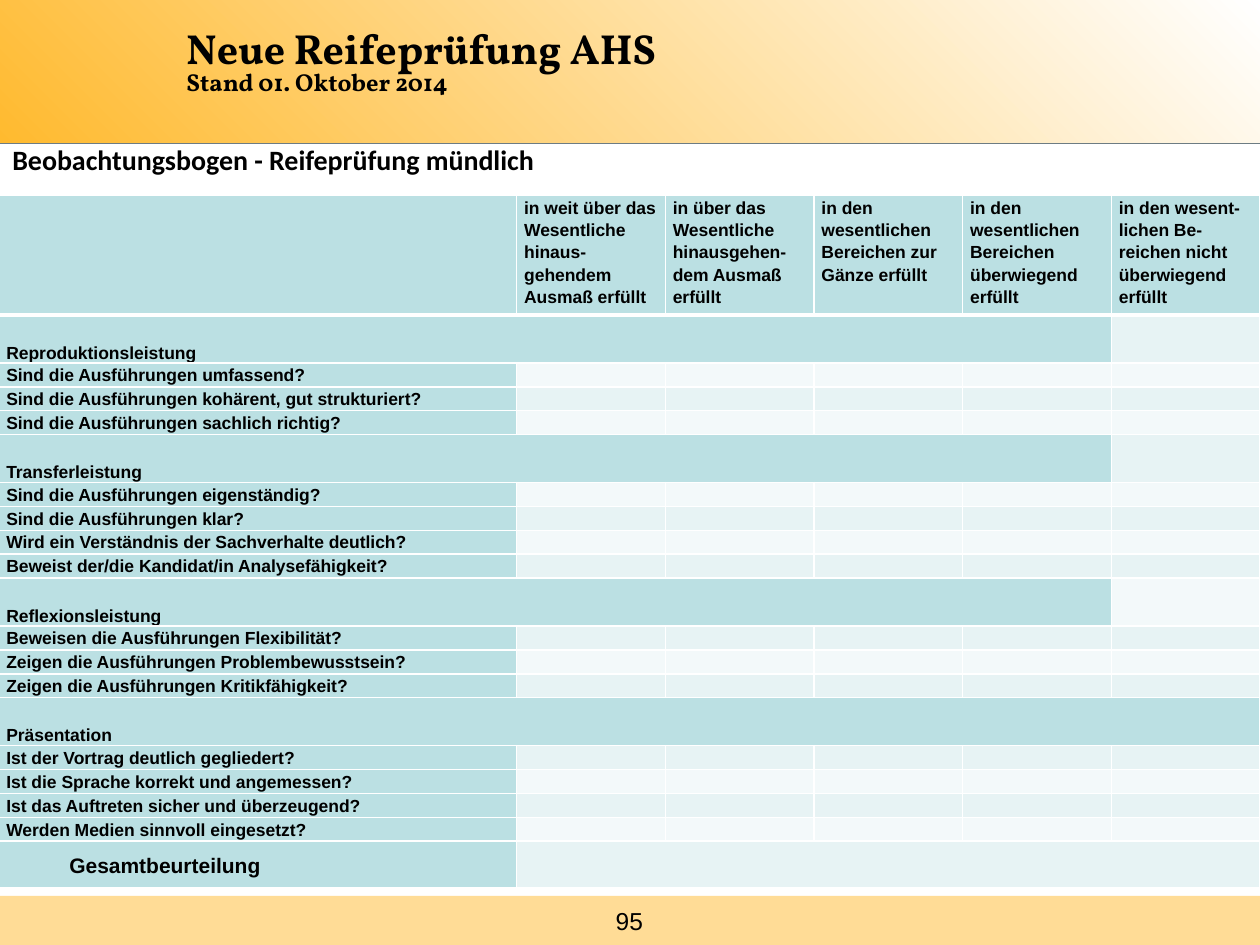
import pptx
import pptx.util
import pptx.dml.color
import pptx.enum.shapes
import pptx.enum.text
import pptx.oxml
import pptx.oxml.ns
from lxml import etree

Inches = pptx.util.Inches
Pt = pptx.util.Pt
Anchor = pptx.enum.text.MSO_ANCHOR
Align = pptx.enum.text.PP_ALIGN

RATINGS = [
    "in weit über das Wesentliche hinaus-gehendem Ausmaß erfüllt",
    "in über das Wesentliche hinausgehen-dem Ausmaß erfüllt",
    "in den wesentlichen Bereichen zur Gänze erfüllt",
    "in den wesentlichen Bereichen überwiegend erfüllt",
    "in den wesent-lichen Be-reichen nicht überwiegend erfüllt",
]
SECTIONS = [
    ("Reproduktionsleistung", 5, [
        "Sind die Ausführungen umfassend?",
        "Sind die Ausführungen kohärent, gut strukturiert?",
        "Sind die Ausführungen sachlich richtig?"]),
    ("Transferleistung", 5, [
        "Sind die Ausführungen eigenständig?",
        "Sind die Ausführungen klar?",
        "Wird ein Verständnis der Sachverhalte deutlich?",
        "Beweist der/die Kandidat/in Analysefähigkeit?"]),
    ("Reflexionsleistung", 5, [
        "Beweisen die Ausführungen Flexibilität?",
        "Zeigen die Ausführungen Problembewusstsein?",
        "Zeigen die Ausführungen Kritikfähigkeit?"]),
    ("Präsentation", 6, [
        "Ist der Vortrag deutlich gegliedert?",
        "Ist die Sprache korrekt und angemessen?",
        "Ist das Auftreten sicher und überzeugend?",
        "Werden Medien sinnvoll eingesetzt?"]),
]


def rgb(value):
    return pptx.dml.color.RGBColor.from_string(value)


def add_xml(parent, tag, **attributes):
    return etree.SubElement(parent, pptx.oxml.ns.qn(tag), attributes)


class Sheet:
    ink, amber, rule, white = "000000", "FFBA2F", "6D7C83", "FFFFFF"
    label, bands = "BBE0E3", ("F3F9FA", "E7F3F4")

    def __init__(self, slide):
        self.slide = slide

    def style(self, paragraph, font, size, bold=False):
        for run in paragraph.runs:
            run.font.name = font
            run.font.size = Pt(size)
            run.font.bold = bold
            run.font.color.rgb = rgb(self.ink)

    def band(self, top, height):
        band = self.slide.shapes.add_shape(
            pptx.enum.shapes.MSO_SHAPE.RECTANGLE, 0, Inches(top), Inches(10), Inches(height))
        band.shadow.inherit = False
        band.line.fill.background()
        band.fill.solid()
        band.fill.fore_color.rgb = rgb(self.amber)
        return band

    def radial_band(self, top, height):
        band = self.band(top, height)
        band.fill.gradient()
        gradient = band._element.spPr.find(pptx.oxml.ns.qn("a:gradFill"))
        for child in list(gradient):
            gradient.remove(child)
        stops = add_xml(gradient, "a:gsLst")
        for position, color in (("0", self.amber), ("100000", self.white)):
            add_xml(add_xml(stops, "a:gs", pos=position), "a:srgbClr", val=color)
        add_xml(add_xml(gradient, "a:path", path="circle"), "a:fillToRect", t="100000", r="100000")

    def clear_band(self, top, height, alpha):
        band = self.band(top, height)
        color = band._element.spPr.find(".//" + pptx.oxml.ns.qn("a:srgbClr"))
        add_xml(color, "a:alpha", val=str(alpha * 1000))

    def line(self, top):
        line = self.slide.shapes.add_connector(
            pptx.enum.shapes.MSO_CONNECTOR.STRAIGHT, 0, Inches(top), Inches(10), Inches(top))
        line.line.color.rgb = rgb(self.rule)
        line.line.width = Pt(1)
        add_xml(line._element.spPr, "a:effectLst")

    def title(self, headline, status):
        title = self.slide.shapes.title
        title.left, title.top, title.width, title.height = map(Inches, (1.38, 0.21, 6.46, 0.86))
        frame = title.text_frame
        frame.text = f"{headline}\v{status}"
        frame.vertical_anchor = Anchor.TOP
        frame.auto_size = pptx.enum.text.MSO_AUTO_SIZE.NONE
        paragraph = frame.paragraphs[0]
        paragraph.alignment = Align.LEFT
        paragraph.line_spacing = 0.8
        self.style(paragraph, "Vollkorn", 24, True)
        paragraph.runs[1].font.size = Pt(14)

    def text(self, words, box, font, size, bold=False, align=Align.LEFT):
        frame = self.slide.shapes.add_textbox(*map(Inches, box)).text_frame
        frame.word_wrap = True
        frame.text = words
        frame.paragraphs[0].alignment = align
        self.style(frame.paragraphs[0], font, size, bold)

    def cell(self, cell, words, fill, size=10, anchor=Anchor.TOP, bottom=1):
        cell.margin_left = cell.margin_right = Inches(0.06)
        cell.margin_top = cell.margin_bottom = 0
        cell.vertical_anchor = anchor
        paragraph = cell.text_frame.paragraphs[0]
        paragraph.line_spacing = 1.15
        if words:
            paragraph.text = words
            self.style(paragraph, "Arial", size, True)
        else:
            add_xml(paragraph._p, "a:endParaRPr", sz=str(size * 100))
        properties = cell._tc.get_or_add_tcPr()
        for side, width in (("L", 1), ("R", 1), ("T", 1), ("B", bottom)):
            border = add_xml(properties, f"a:ln{side}", w=str(Pt(width)))
            add_xml(add_xml(border, "a:solidFill"), "a:srgbClr", val=self.white)
        cell.fill.solid()
        cell.fill.fore_color.rgb = rgb(fill)

    def table(self, rows):
        table = self.slide.shapes.add_table(
            len(rows), 6, Inches(-0.01), Inches(1.55), Inches(10), Inches(5.53)).table
        for index, column in enumerate(table.columns):
            column.width = Inches(1.18 if index else 4.11)
        for index, (kind, labels, span) in enumerate(rows):
            height = {"header": 0.95, "section": 0.38, "question": 0.19, "total": 0.37}[kind]
            table.rows[index].height = Inches(height)
            anchor = {"section": Anchor.BOTTOM, "total": Anchor.MIDDLE}.get(kind, Anchor.TOP)
            for column in range(6):
                labelled = kind == "header" or column < span
                self.cell(table.cell(index, column),
                          labels[column] if column < len(labels) else "",
                          self.label if labelled else self.bands[index % 2],
                          12 if kind == "total" else 10, anchor,
                          3 if kind == "header" else 1)
            if span > 1:
                table.cell(index, 0).merge(table.cell(index, span - 1))
            if kind == "total":
                table.cell(index, 1).merge(table.cell(index, 5))
                table.cell(index, 0).margin_left = Inches(0.56)


def main():
    deck = pptx.Presentation()
    deck.slide_width, deck.slide_height = Inches(10), Inches(7.5)
    sheet = Sheet(deck.slides.add_slide(deck.slide_layouts[5]))
    sheet.radial_band(0, 1.14)
    sheet.line(1.14)
    sheet.clear_band(7.11, 0.39, 50)
    sheet.text("95", (3.83, 7.14, 2.33, 0.32), "Arial", 14, align=Align.CENTER)
    sheet.title("Neue Reifeprüfung AHS", "Stand 01. Oktober 2014")
    title = sheet.slide.shapes.title._element
    title.getparent().append(title)
    rows = [("header", [""] + RATINGS, 1)]
    for section, span, questions in SECTIONS:
        rows.append(("section", [section], span))
        rows += [("question", [question], 1) for question in questions]
    rows.append(("total", ["Gesamtbeurteilung"], 1))
    sheet.table(rows)
    sheet.text("Beobachtungsbogen - Reifeprüfung mündlich", (0, 1.08, 4.4, 0.67), "Calibri", 16, True)
    deck.save("out.pptx")


if __name__ == "__main__":
    main()
